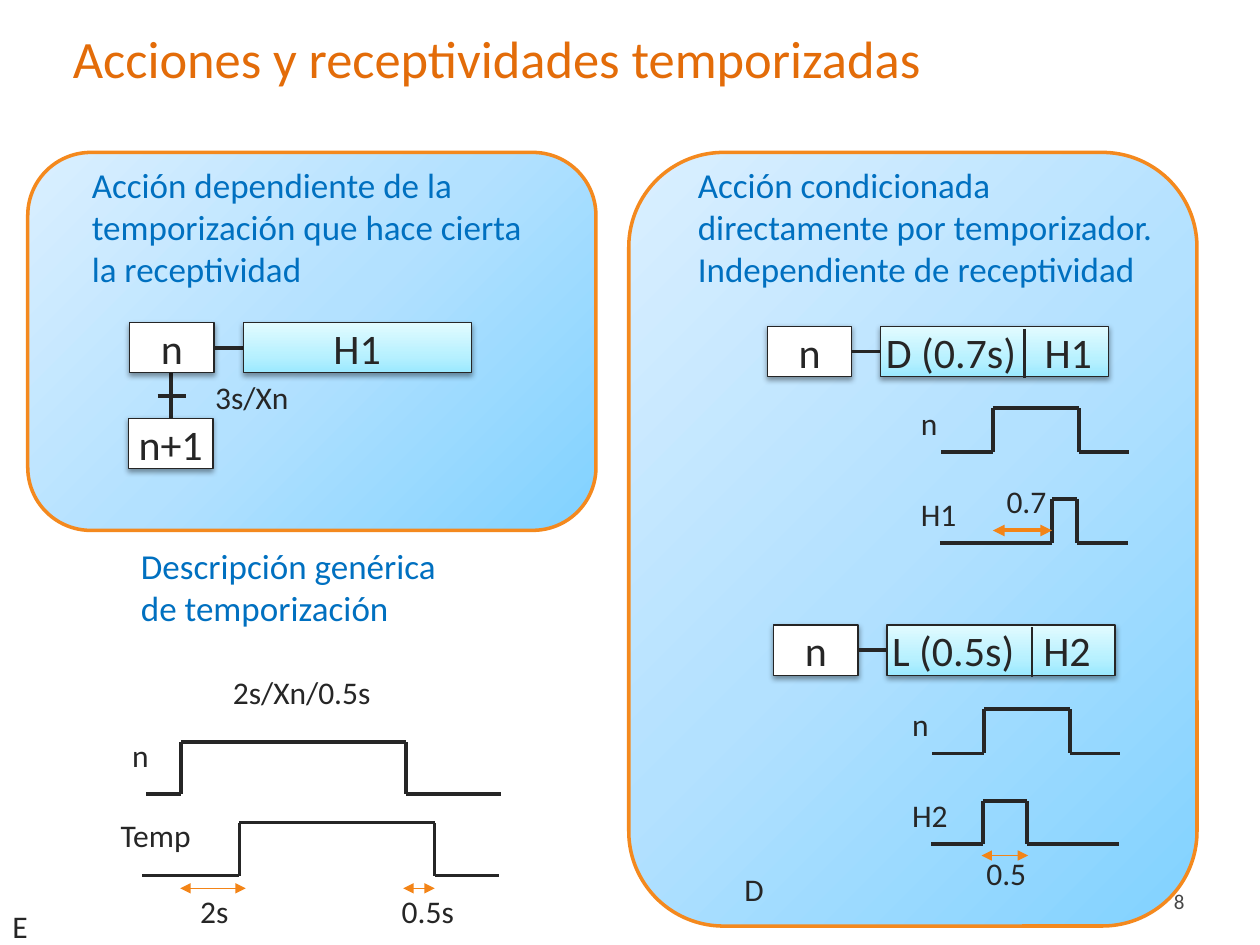
from lxml.etree import SubElement
from pptx import Presentation
from pptx.dml.color import RGBColor
from pptx.enum.shapes import MSO_CONNECTOR as CONNECTOR, MSO_SHAPE as SHAPE
from pptx.enum.text import MSO_ANCHOR as ANCHOR, PP_ALIGN as ALIGN
from pptx.oxml import parse_xml
from pptx.oxml.ns import nsdecls, qn
from pptx.util import Inches, Pt

color = RGBColor.from_string
INK, ORANGE, ARROW, BLUE, WHITE = "262626", "F4891E", "F38417", "0070C0", "FFFFFF"
PANEL_STOPS = [(0, "81D2FF"), (50, "B3E1FF"), (100, "DAEFFF")]
ACTION_STOPS = [(0, "9BE9FF"), (35, "B8F1FF"), (100, "E2FBFF")]
FROM_CORNER = '<a:path path="circle"><a:fillToRect l="100000" t="100000"/></a:path>'
UPWARDS = '<a:lin ang="16200000" scaled="0"/>'
SHADOW = ('<a:outerShdw blurRad="39400" dist="20300" dir="5400000" rotWithShape="0">'
          '<a:srgbClr val="000000"><a:alpha val="38000"/></a:srgbClr></a:outerShdw>')

presentation = Presentation()
presentation.slide_width, presentation.slide_height = Inches(10), Inches(7.5)
slide = presentation.slides.add_slide(presentation.slide_layouts[6])
# Grid of 100 columns by 75 rows
COLUMN = presentation.slide_width / 100
ROW = presentation.slide_height / 75


def add_box(left, top, width, height, text="", size=18, ink=INK, align=ALIGN.LEFT,
            anchor=ANCHOR.TOP, kind=None, stops=None, direction="", line=None, tab=None):
    place = [int(v) for v in (left * COLUMN, top * ROW, width * COLUMN, height * ROW)]
    if kind is None:
        shape = slide.shapes.add_textbox(*place)
    else:
        shape = slide.shapes.add_shape(kind, *place)
        shape.shadow.inherit = False
        shape.line.color.rgb, shape.line.width = color(line[0]), Pt(line[1])
        shape.fill.solid()
        shape.fill.fore_color.rgb = color(WHITE)
        if stops:
            listing = "".join(f'<a:gs pos="{position * 1000}"><a:srgbClr val="{tone}"/></a:gs>'
                              for position, tone in stops)
            properties = shape._element.spPr
            properties.replace(properties.find(qn("a:solidFill")), parse_xml(
                f'<a:gradFill {nsdecls("a")} rotWithShape="1"><a:gsLst>{listing}</a:gsLst>'
                f'{direction}</a:gradFill>'))
        if kind == SHAPE.RECTANGLE:
            properties = shape._element.spPr
            properties.replace(properties.find(qn("a:effectLst")), parse_xml(
                f'<a:effectLst {nsdecls("a")}>{SHADOW}</a:effectLst>'))
    frame = shape.text_frame
    frame.word_wrap = True
    frame.vertical_anchor = anchor
    if kind == SHAPE.RECTANGLE:
        frame.margin_left, frame.margin_right = Inches(0.04), 0 if tab else Inches(0.04)
    frame.text = text
    for paragraph in frame.paragraphs:
        paragraph.alignment = align
        if tab:
            tabs = SubElement(paragraph._p.get_or_add_pPr(), qn("a:tabLst"))
            SubElement(tabs, qn("a:tab"), pos=str(int(tab * COLUMN)), algn="l")
        for run in paragraph.runs:
            run.font.name, run.font.size = "Calibri", Pt(size)
            run.font.color.rgb = color(ink)


def add_line(start, end, width=2.25, ink=INK, arrows=False):
    connector = slide.shapes.add_connector(
        CONNECTOR.STRAIGHT, int(start[0] * COLUMN), int(start[1] * ROW),
        int(end[0] * COLUMN), int(end[1] * ROW))
    connector.line.color.rgb, connector.line.width = color(ink), Pt(width)
    if arrows:
        outline = connector.line._get_or_add_ln()
        for tip in ("a:headEnd", "a:tailEnd"):
            SubElement(outline, qn(tip), type="triangle")
    SubElement(connector._element.spPr, qn("a:effectLst"))


# Panels
for left, height in ((2.2, 30), (49.9, 61.4)):
    add_box(left, 12.1, 45.1, height, kind=SHAPE.ROUNDED_RECTANGLE, stops=PANEL_STOPS,
            direction=FROM_CORNER, line=(ORANGE, 2))

# Title and page number
add_box(4.8, 0.8, 91.9, 7.5, "Acciones y receptividades temporizadas", 30, "E36C09",
        anchor=ANCHOR.MIDDLE)
add_box(71.7, 69.5, 23.3, 4, "8", 12, "464646", ALIGN.RIGHT, ANCHOR.MIDDLE)

# Headings
for left, top, width, height, text in (
        (6.3, 12.5, 38.1, 11.1,
         "Acción dependiente de la temporización que hace cierta la receptividad"),
        (54.4, 12.5, 38.5, 11.1,
         "Acción condicionada directamente por temporizador.\nIndependiente de receptividad"),
        (10.2, 42.7, 27, 7.7, "Descripción genérica\nde temporización")):
    add_box(left, top, width, height, text, 20, BLUE)

# Transition from step n to step n+1
add_line((13.6, 29.6), (13.6, 33.2))
add_line((12.5, 31.4), (14.8, 31.4))

# Steps with their actions; tab is where the second half of the action starts
STEP, LINK, ACTION, STEP_HEIGHT = 6.7, 2.3, 18.1, 4
for left, top, step, action, tab, divider in (
        (10.3, 25.6, "n", "H1", None, None),
        (10.2, 33.2, "n+1", None, None, None),
        (60.9, 25.9, "n", "D (0.7s)\tH1", 12.6, 81.3),
        (61.4, 49.6, "n", "L (0.5s)\tH2", 12, 81.9)):
    add_box(left, top, STEP, STEP_HEIGHT, step, 24, INK, ALIGN.CENTER, ANCHOR.MIDDLE,
            SHAPE.RECTANGLE, line=("252525", 0.75))
    if action:
        middle = top + STEP_HEIGHT / 2
        add_line((left + STEP, middle), (left + STEP + LINK, middle))
        add_box(left + STEP + LINK, top, ACTION, STEP_HEIGHT, action, 24, INK,
                ALIGN.LEFT if tab else ALIGN.CENTER, ANCHOR.MIDDLE, SHAPE.RECTANGLE,
                ACTION_STOPS, UPWARDS, (INK, 0.75), tab)
    if divider:
        add_line((divider, top + 0.2), (divider, top + STEP_HEIGHT + 0.1), 1.5)

# Pulses: start, rise, fall, end, low level, high level, line width
for start, rise, fall, end, low, high, width in (
        (74.7, 78.8, 85.6, 89.6, 35.9, 32.4, 2.25),
        (74.6, 83.5, 85.5, 89.5, 43.1, 39.6, 2.25),
        (74, 78.1, 84.9, 88.9, 59.8, 56.3, 2.25),
        (73.9, 78, 81.5, 88.8, 67, 63.6, 2.25),
        (11.6, 14.4, 32.2, 39.8, 63, 58.9, 2.25),
        (11.3, 19, 34.5, 39.6, 69.5, 65.3, 1.5)):
    corners = [(start, low), (rise, low), (rise, high), (fall, high), (fall, low), (end, low)]
    for corner, following in zip(corners, corners[1:]):
        add_line(corner, following, width)

# Delays
for left, right, level, width in ((78.8, 83.5, 42.1, 2.25), (77.9, 81.6, 67.9, 0.75),
                                  (14.3, 19.5, 70.5, 0.75), (32, 34.5, 70.5, 0.75)):
    add_line((right, level), (left, level), width, ARROW, True)

# Labels
for left, top, width, text in (
        (72.1, 31.6, 4, "n"), (72.1, 38.8, 6, "H1"), (78.9, 37.8, 6, "0.7"),
        (71.4, 55.5, 4, "n"), (71.4, 62.7, 6, "H2"), (77.3, 67.3, 6, "0.5"),
        (17.5, 52.9, 15, "2s/Xn/0.5s"), (9.5, 57.9, 4, "n"), (8.6, 64.3, 9, "Temp"),
        (14.9, 70.3, 6, "2s"), (30.9, 70.3, 7, "0.5s"), (16.1, 29.5, 9, "3s/Xn"),
        (0, 71.5, 4, "E"), (58.1, 68.6, 4, "D")):
    add_box(left, top, width, 4, text)

presentation.save("out.pptx")
